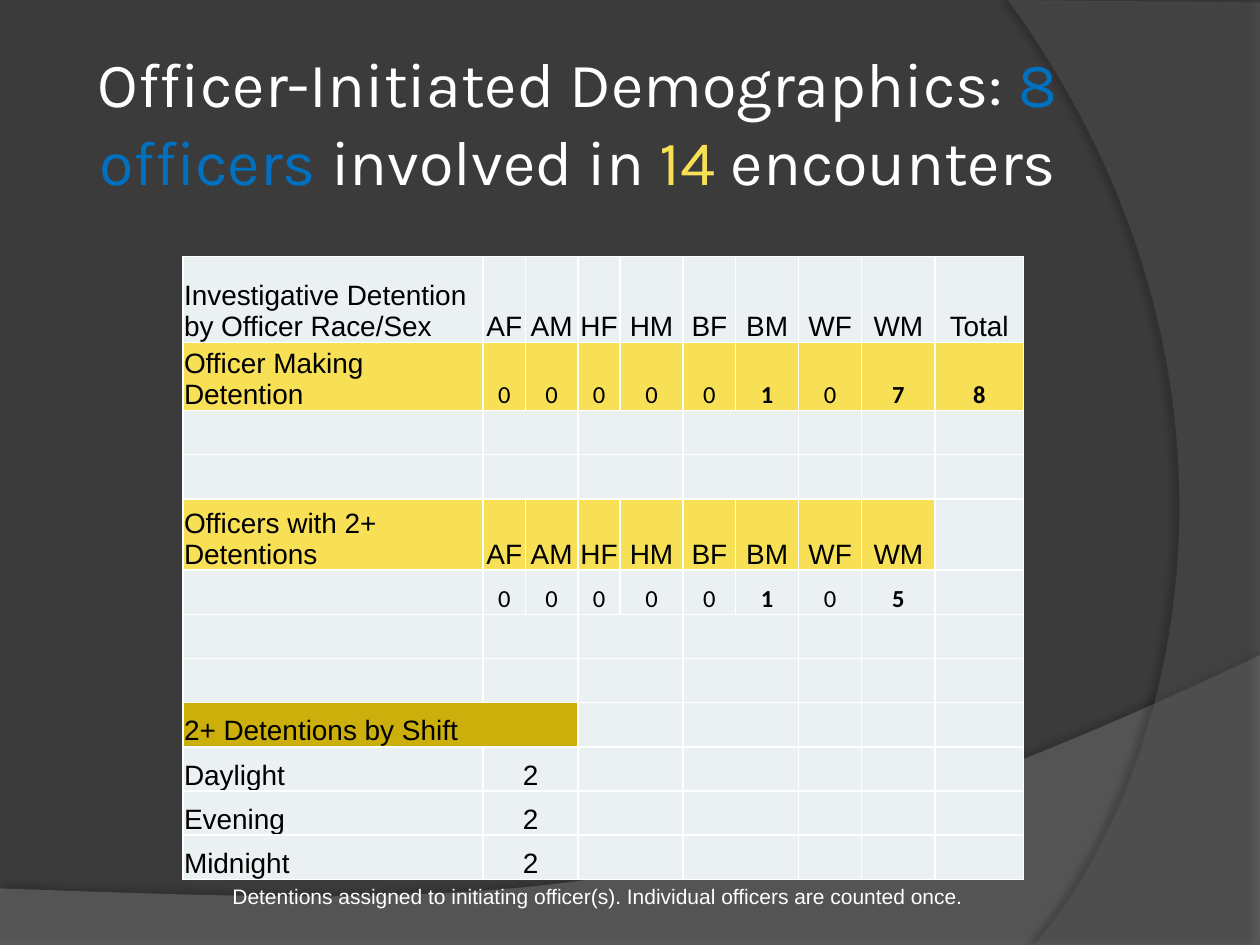
from dataclasses import dataclass

from lxml.etree import SubElement
from pptx import Presentation
from pptx.dml.color import RGBColor
from pptx.enum.text import MSO_ANCHOR as Anchor, PP_ALIGN as Align
from pptx.oxml.ns import qn
from pptx.util import Cm, Pt

COLORS = {
    "background": "3B3B3B", "hill": "7F7F7F", "arc": "5E5E5E", "shadow": "000000",
    "white": "FFFFFF", "black": "000000", "blue": "0070C0",
    "yellow": "F7DF56", "gold": "CCAF0A", "pale": "EBF0F2",
}
CODES = ("AF", "AM", "HF", "HM", "BF", "BM", "WF", "WM")
COLUMN_WIDTHS = (6.05, 0.85, 1.06, 0.85, 1.27, 1.06, 1.27, 1.27, 1.48, 1.78)
PAIRS = ((1, 2), (3, 4), (5, 6))
SHIFT_PAIRS = ((0, 2), (3, 4), (5, 6))


@dataclass(frozen=True)
class Row:
    height: float = 0.89
    label: str = ""
    values: tuple = ()
    fill: str = "pale"
    filled: int = 0
    counts: bool = False
    merges: tuple = ()


@dataclass(frozen=True)
class Backdrop:
    corners: tuple
    curve: tuple
    fill: str
    opacity: int
    shadow_opacity: int
    shadow_distance: float
    shadow_angle: int


EMPTY = Row(merges=PAIRS)
ROWS = (
    Row(1.73, "Investigative Detention by Officer Race/Sex", CODES + ("Total",)),
    Row(1.27, "Officer Making Detention", tuple("000001078"), "yellow", 10, True),
    EMPTY,
    EMPTY,
    Row(1.44, "Officers with 2+ Detentions", CODES, "yellow", 9),
    Row(values=tuple("00000105"), counts=True),
    EMPTY,
    EMPTY,
    Row(label="2+ Detentions by Shift", fill="gold", filled=3, merges=SHIFT_PAIRS),
    *(Row(label=shift, values=("2",), merges=PAIRS)
      for shift in ("Daylight", "Evening", "Midnight")),
)
BACKDROPS = (
    Backdrop(((0, 17.91), (0, 19.05), (25.4, 19.05), (25.4, 13.21)),
             ((14.2, 18.52), (9.93, 18.26), (0, 17.91)), "hill", 45, 35, 3.5, 270),
    Backdrop(((25.4, 0.05), (25.4, 19.05), (20.85, 19.05)),
             ((23.75, 15.72), (25.86, 7.62), (20.32, 0)), "arc", 40, 45, 4, 180),
)


def rgb(name: str) -> RGBColor:
    return RGBColor.from_string(COLORS[name])


def add_span(para, text: str, *, size: float = 16, font: str = "Arial",
             color: str = "black", bold: bool = False) -> None:
    span = para.add_run()
    span.text = text
    span.font.size = Pt(size)
    span.font.name = font
    span.font.bold = bold
    span.font.color.rgb = rgb(color)


def add_box(page, left: float, top: float, width: float, height: float):
    box = page.shapes.add_textbox(Cm(left), Cm(top), Cm(width), Cm(height))
    frame = box.text_frame
    frame.word_wrap = True
    frame.vertical_anchor = Anchor.MIDDLE
    para = frame.paragraphs[0]
    para.alignment = Align.CENTER
    return frame, para


def curve_points(start: tuple, curve: tuple, steps: int = 60) -> list:
    def blend(t: float, axis: int) -> float:
        a, b, c, d = (point[axis] for point in (start, *curve))
        return (1 - t) ** 3 * a + 3 * (1 - t) ** 2 * t * b + 3 * (1 - t) * t ** 2 * c + t ** 3 * d
    return [(blend(i / steps, 0), blend(i / steps, 1)) for i in range(1, steps + 1)]


def add_backdrop(page, item: Backdrop) -> None:
    points = [*item.corners, *curve_points(item.corners[-1], item.curve)]
    lengths = [(Cm(x), Cm(y)) for x, y in points]
    builder = page.shapes.build_freeform(*lengths[0])
    builder.add_line_segments(lengths[1:], close=True)
    shape = builder.convert_to_shape()
    shape.shadow.inherit = False
    shape.line.fill.background()
    shape.fill.solid()
    shape.fill.fore_color.rgb = rgb(item.fill)
    properties = shape.element.spPr
    color = properties.find(qn("a:solidFill")).find(qn("a:srgbClr"))
    SubElement(color, qn("a:alpha"), val=str(item.opacity * 1000))
    shadow = SubElement(properties.find(qn("a:effectLst")), qn("a:outerShdw"),
                        blurRad=str(Pt(4)), dist=str(Pt(item.shadow_distance)),
                        dir=str(item.shadow_angle * 60000), rotWithShape="0")
    tint = SubElement(shadow, qn("a:srgbClr"), val=COLORS["shadow"])
    SubElement(tint, qn("a:alpha"), val=str(item.shadow_opacity * 1000))


def add_title(page) -> None:
    frame, para = add_box(page, 1.27, 0.76, 20.75, 3.18)
    frame.margin_left = frame.margin_right = Cm(0.13)
    for text, color, size in (
        ("Officer-Initiated Demographics: ", "white", 36), ("8", "blue", 36),
        (" ", "blue", 41.4), ("officers", "blue", 36), (" involved in ", "white", 36),
        ("14", "yellow", 36), (" encounters", "white", 36),
    ):
        add_span(para, text, size=size, font="Karla", color=color)


def style_cell(cell, fill: str) -> None:
    properties = cell._tc.get_or_add_tcPr()
    for side in ("lnL", "lnR", "lnT", "lnB"):
        border = SubElement(properties, qn(f"a:{side}"), w=str(Pt(1)))
        paint = SubElement(border, qn("a:solidFill"))
        SubElement(paint, qn("a:srgbClr"), val=COLORS["white"])
    cell.fill.solid()
    cell.fill.fore_color.rgb = rgb(fill)
    cell.vertical_anchor = Anchor.BOTTOM
    cell.margin_left = cell.margin_right = cell.margin_top = Cm(0.02)
    cell.margin_bottom = 0


def fill_row(table, index: int, row: Row) -> None:
    table.rows[index].height = Cm(row.height)
    texts = (row.label, *row.values)
    for column in range(len(COLUMN_WIDTHS)):
        cell = table.cell(index, column)
        style_cell(cell, row.fill if column < row.filled else "pale")
        text = texts[column] if column < len(texts) else ""
        if not text:
            continue
        para = cell.text_frame.paragraphs[0]
        para.alignment = Align.CENTER if column else Align.LEFT
        if row.counts and column:
            add_span(para, text, size=14, font="Calibri", bold=text != "0")
        else:
            add_span(para, text)
    for first, last in row.merges:
        table.cell(index, first).merge(table.cell(index, last))


def add_detention_table(page) -> None:
    height = sum(row.height for row in ROWS)
    table = page.shapes.add_table(len(ROWS), len(COLUMN_WIDTHS), Cm(3.69), Cm(5.17),
                                  Cm(sum(COLUMN_WIDTHS)), Cm(height)).table
    table.first_row = table.horz_banding = False
    for column, width in zip(table.columns, COLUMN_WIDTHS):
        column.width = Cm(width)
    for index, row in enumerate(ROWS):
        fill_row(table, index, row)


def main() -> None:
    deck = Presentation()
    deck.slide_width, deck.slide_height = Cm(25.4), Cm(19.05)
    page = deck.slides.add_slide(deck.slide_layouts[6])
    page.background.fill.solid()
    page.background.fill.fore_color.rgb = rgb("background")
    for item in BACKDROPS:
        add_backdrop(page, item)
    add_title(page)
    add_detention_table(page)
    _, note = add_box(page, 3.48, 17.68, 17.15, 0.77)
    add_span(note, "Detentions assigned to initiating officer(s). "
             "Individual officers are counted once.", size=12, color="white")
    deck.save("out.pptx")


if __name__ == "__main__":
    main()
